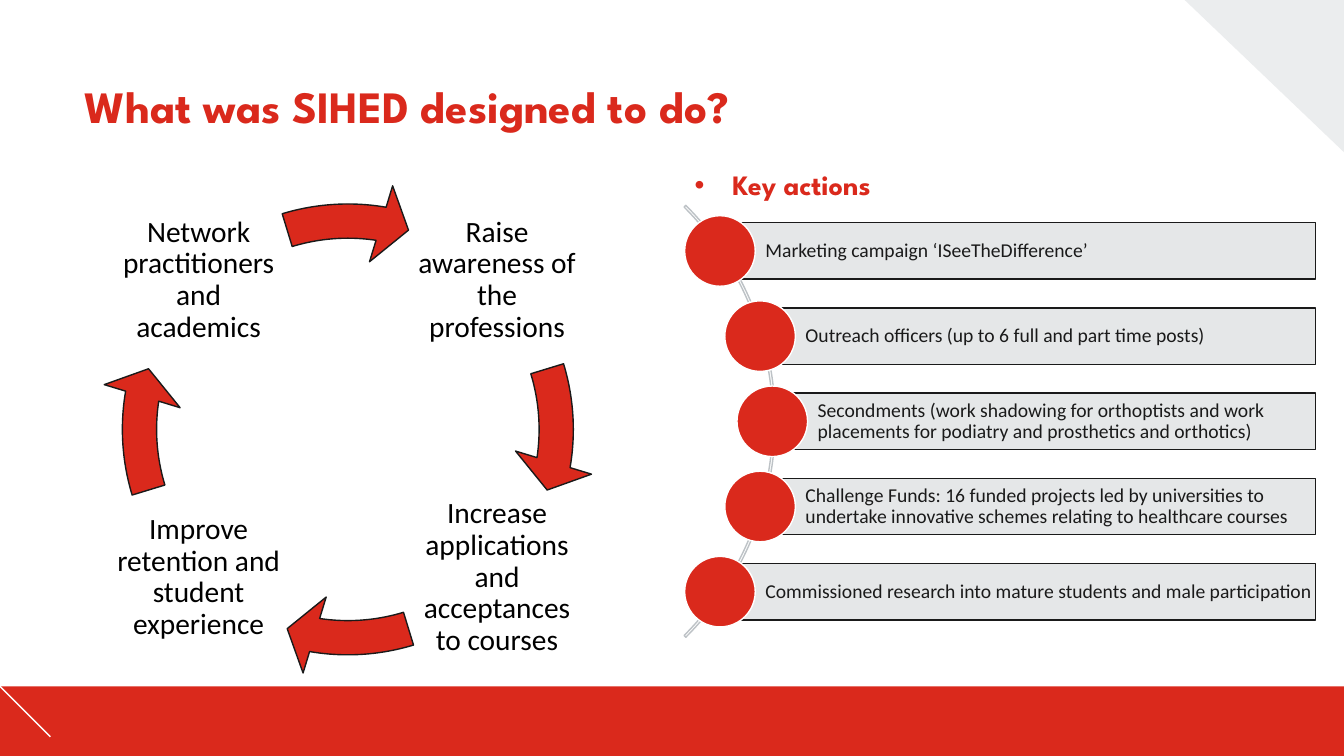
from dataclasses import dataclass
from math import sqrt

from lxml.etree import SubElement
from pptx import Presentation
from pptx.dml.color import RGBColor
from pptx.enum.shapes import MSO_CONNECTOR, MSO_SHAPE
from pptx.enum.text import MSO_ANCHOR, MSO_AUTO_SIZE, PP_ALIGN
from pptx.oxml.ns import qn
from pptx.util import Inches, Pt


@dataclass(frozen=True)
class Theme:
    red: RGBColor = RGBColor(0xDA, 0x29, 0x1C)
    ink: RGBColor = RGBColor(0x1A, 0x1A, 0x1A)
    black: RGBColor = RGBColor(0, 0, 0)
    white: RGBColor = RGBColor(0xFF, 0xFF, 0xFF)
    corner_grey: RGBColor = RGBColor(0xEB, 0xED, 0xEE)
    bar_grey: RGBColor = RGBColor(0xE5, 0xE7, 0xE8)
    arc_grey: RGBColor = RGBColor(0xBD, 0xC2, 0xC6)
    heading_font: str = "League Spartan"
    text_font: str = "Calibri"
    title_size: int = 32
    heading_size: int = 20
    goal_size: int = 21
    action_size: int = 14


@dataclass(frozen=True)
class Goal:
    text: str
    left: float
    top: float


THEME = Theme()

# Clockwise from the top right
GOALS = [
    Goal("Raise awareness of the professions", 4.06, 1.91),
    Goal("Increase applications and acceptances to courses", 4.06, 4.86),
    Goal("Improve retention and student experience", 1.1, 4.86),
    Goal("Network practitioners and academics", 1.1, 1.91),
]
ACTIONS = [
    "Marketing campaign ‘ISeeTheDifference’",
    "Outreach officers (up to 6 full and part time posts)",
    "Secondments (work shadowing for orthoptists and work placements "
    "for podiatry and prosthetics and orthotics)",
    "Challenge Funds: 16 funded projects led by universities to "
    "undertake innovative schemes relating to healthcare courses",
    "Commissioned research into mature students and male participation",
]

# Preset shape angles: 60000 units a degree, adjustments count in 100000 units
DEGREE = 0.6
FULL_TURN = 360 * DEGREE


def paint(shape, fill: RGBColor | None, line: RGBColor | None = None) -> None:
    shape.shadow.inherit = False
    if fill is None:
        shape.fill.background()
    else:
        shape.fill.solid()
        shape.fill.fore_color.rgb = fill
    if line is None:
        shape.line.fill.background()
    else:
        shape.line.color.rgb = line
        shape.line.width = Pt(1)


def add_preset(slide, preset, left: float, top: float, width: float, height: float,
               fill: RGBColor | None, line: RGBColor | None = None):
    shape = slide.shapes.add_shape(
        preset, Inches(left), Inches(top), Inches(width), Inches(height))
    paint(shape, fill, line)
    return shape


def write(frame, text: str, font: str, size: int, color: RGBColor,
          align=PP_ALIGN.LEFT, bold: bool = False) -> None:
    frame.word_wrap = True
    frame.auto_size = MSO_AUTO_SIZE.NONE
    frame.text = text
    paragraph = frame.paragraphs[0]
    paragraph.alignment = align
    paragraph.line_spacing = 0.9
    paragraph.space_before = Pt(0)
    paragraph.font.name = font
    paragraph.font.size = Pt(size)
    paragraph.font.bold = bold
    paragraph.font.color.rgb = color


def set_insets(frame, left: float, right: float, vertical: float) -> None:
    frame.margin_left, frame.margin_right = Inches(left), Inches(right)
    frame.margin_top = frame.margin_bottom = Inches(vertical)
    frame.vertical_anchor = MSO_ANCHOR.MIDDLE


def place(shape, left: float, top: float, width: float, height: float) -> None:
    shape.left, shape.top = Inches(left), Inches(top)
    shape.width, shape.height = Inches(width), Inches(height)


def draw_backdrop(slide) -> None:
    builder = slide.shapes.build_freeform(Inches(11.75), 0)
    builder.add_line_segments([(Inches(13.33), 0), (Inches(13.33), Inches(1.51))])
    paint(builder.convert_to_shape(), THEME.corner_grey)
    add_preset(slide, MSO_SHAPE.RECTANGLE, 0, 6.81, 13.33, 0.69, THEME.red)
    slash = slide.shapes.add_connector(
        MSO_CONNECTOR.STRAIGHT, 0, Inches(6.81), Inches(0.5), Inches(7.31))
    slash.line.color.rgb = THEME.white
    slash.line.width = Pt(1)
    SubElement(slash.element.spPr, qn("a:effectLst"))


def draw_headings(slide) -> None:
    title, body = slide.placeholders[0], slide.placeholders[1]
    place(title, 0.74, 0.69, 11.96, 0.79)
    title.text_frame.vertical_anchor = MSO_ANCHOR.MIDDLE
    write(title.text_frame, "What was SIHED designed to do?", THEME.heading_font,
          THEME.title_size, THEME.red, bold=True)
    place(body, 6.79, 1.65, 5.9, 5.06)
    properties = body.text_frame.paragraphs[0]._p.get_or_add_pPr()
    properties.set("marL", "0")
    properties.set("indent", "0")
    SubElement(properties, qn("a:buNone"))
    write(body.text_frame, "Key actions", THEME.heading_font,
          THEME.heading_size, THEME.red, bold=True)


def draw_cycle(slide) -> None:
    for index, goal in enumerate(GOALS):
        label = slide.shapes.add_textbox(
            Inches(goal.left), Inches(goal.top), Inches(1.74), Inches(1.74))
        set_insets(label.text_frame, 0.03, 0.03, 0.03)
        write(label.text_frame, goal.text, THEME.text_font, THEME.goal_size,
              THEME.black, PP_ALIGN.CENTER)
        arrow = add_preset(slide, MSO_SHAPE.CIRCULAR_ARROW, 0.99, 1.8, 4.92, 4.92,
                           THEME.red, THEME.ink)
        turn = index * 90
        settings = (0.069, 7.75 * DEGREE, (9.18 + turn) * DEGREE,
                    (343.07 + turn) * DEGREE % FULL_TURN, 0.08)
        for position, value in enumerate(settings):
            arrow.adjustments[position] = value


def draw_actions(slide) -> None:
    arc = add_preset(slide, MSO_SHAPE.BLOCK_ARC, 1.63, 1.15, 6.06, 6.06,
                     None, THEME.arc_grey)
    for position, value in enumerate((315 * DEGREE, 45 * DEGREE, 0.004)):
        arc.adjustments[position] = value

    # Discs sit on the arc; each bar starts at the centre of its disc
    centre_x, centre_y, radius = 4.65, 4.18, 3.01
    step = 3.38 / (len(ACTIONS) - 1)
    bar_right, bar_height, disc = 13.05, 0.56, 0.7
    for index, action in enumerate(ACTIONS):
        offset = (index - (len(ACTIONS) - 1) / 2) * step
        x, y = centre_x + sqrt(radius ** 2 - offset ** 2), centre_y + offset
        bar = add_preset(slide, MSO_SHAPE.RECTANGLE, x, y - bar_height / 2,
                         bar_right - x, bar_height, THEME.bar_grey, THEME.ink)
        set_insets(bar.text_frame, 0.45, 0.02, 0.04)
        write(bar.text_frame, action, THEME.text_font, THEME.action_size, THEME.ink)
        add_preset(slide, MSO_SHAPE.OVAL, x - disc / 2, y - disc / 2, disc, disc,
                   THEME.red, THEME.white)


def main() -> None:
    deck = Presentation()
    deck.slide_width, deck.slide_height = Inches(13.33), Inches(7.5)
    slide = deck.slides.add_slide(deck.slide_layouts[1])
    draw_backdrop(slide)
    draw_headings(slide)
    draw_cycle(slide)
    draw_actions(slide)
    deck.save("out.pptx")


if __name__ == "__main__":
    main()
